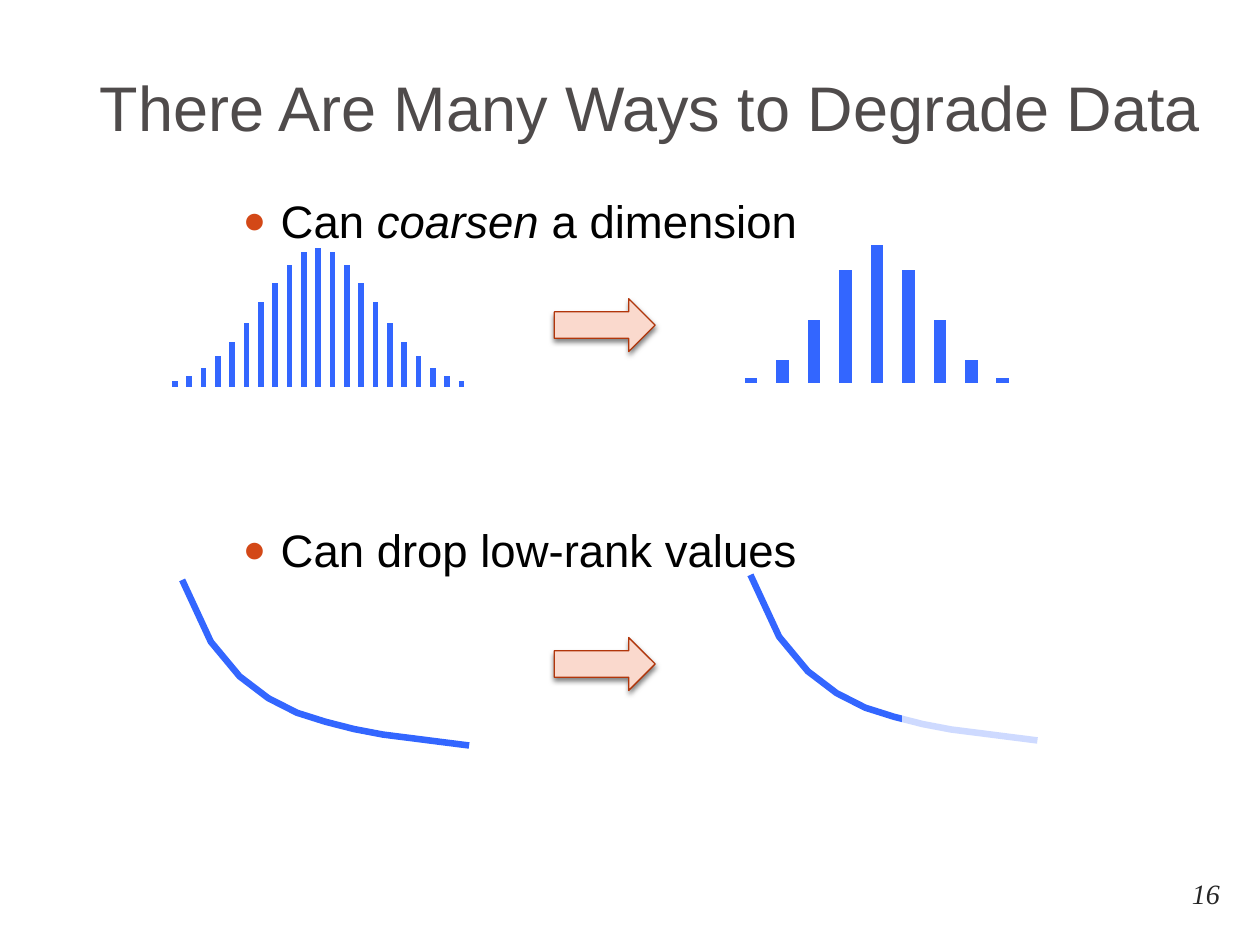
import pptx
import pptx.chart.data
import pptx.dml.color
import pptx.enum.chart
import pptx.enum.shapes
import pptx.enum.text
import pptx.oxml
import pptx.util
from pptx.util import Inches

BLUE = "3366FF"
LEFT_CHART, RIGHT_CHART = 1.28, 5.79
DRAWING_NS = 'xmlns:a="http://schemas.openxmlformats.org/drawingml/2006/main"'
ALIGN = pptx.enum.text.PP_ALIGN
ANCHOR = pptx.enum.text.MSO_ANCHOR
CHART = pptx.enum.chart.XL_CHART_TYPE
SHAPE = pptx.enum.shapes.MSO_SHAPE


def color(hex_string):
    return pptx.dml.color.RGBColor.from_string(hex_string)


def drawing_xml(xml):
    """Parse an element after declaring the drawing namespace on its root."""
    end = min(xml.index(">"), xml.index(" ")) if " " in xml else xml.index(">")
    return pptx.oxml.parse_xml(f"{xml[:end]} {DRAWING_NS}{xml[end:]}")


def add_text(slide, box, runs, size=26, font="Arial", fill="000000",
             align=ALIGN.LEFT, anchor=ANCHOR.TOP, bottom=0.05, bullet=False):
    """Add one paragraph; runs is a list of (text, italic) pairs."""
    shape = slide.shapes.add_textbox(*map(Inches, box))
    frame = shape.text_frame
    frame.word_wrap = True
    frame.vertical_anchor = anchor
    frame.margin_bottom = Inches(bottom)
    paragraph = frame.paragraphs[0]
    paragraph.alignment = align
    for text, italic in runs:
        run = paragraph.add_run()
        run.text = text
        run.font.size = pptx.util.Pt(size)
        run.font.name = font
        run.font.italic = italic
        run.font.color.rgb = color(fill)
    if bullet:
        paragraph.space_before = pptx.util.Pt(5.8)
        properties = paragraph._p.get_or_add_pPr()
        properties.set("marL", str(Inches(0.3)))
        properties.set("indent", str(Inches(-0.3)))
        for xml in ('<a:buClr><a:srgbClr val="D34817"/></a:buClr>',
                    '<a:buSzPct val="85000"/>',
                    '<a:buFont typeface="Arial"/>',
                    '<a:buChar char="●"/>'):
            properties.append(drawing_xml(xml))


def add_bare_chart(slide, kind, box, values, maximum):
    """Add a one-series chart without axes, legend or title."""
    data = pptx.chart.data.CategoryChartData()
    data.categories = [str(i) for i in range(1, len(values) + 1)]
    data.add_series("Series 1", values)
    chart = slide.shapes.add_chart(kind, *map(Inches, box), data).chart
    chart.has_legend = False
    chart.has_title = False
    chart.font.size = pptx.util.Pt(10)
    chart.font.name = "Arial"
    chart.font.color.rgb = color("000000")
    chart.value_axis.minimum_scale = 0
    chart.value_axis.maximum_scale = maximum
    chart.value_axis.has_major_gridlines = False
    for axis in (chart.category_axis, chart.value_axis):
        axis.visible = False
    plot = chart.plots[0]
    plot.vary_by_categories = False
    return plot


def add_columns(slide, box, values):
    plot = add_bare_chart(slide, CHART.COLUMN_CLUSTERED, box, values, 120)
    plot.gap_width = 150
    fill = plot.series[0].format.fill
    fill.solid()
    fill.fore_color.rgb = color(BLUE)


def add_curve(slide, box, values):
    plot = add_bare_chart(slide, CHART.LINE, box, values, 109)
    series = plot.series[0]
    series.smooth = False
    series.marker.style = pptx.enum.chart.XL_MARKER_STYLE.NONE
    series.format.line.color.rgb = color(BLUE)
    series.format.line.width = pptx.util.Pt(3.75)


def add_filled_shape(slide, kind, box, fill):
    shape = slide.shapes.add_shape(kind, *map(Inches, box))
    shape.shadow.inherit = False
    shape.fill.solid()
    shape.fill.fore_color.rgb = color(fill)
    shape.line.fill.background()
    return shape


def add_arrow(slide, top):
    shape = add_filled_shape(slide, SHAPE.RIGHT_ARROW, (4.4, top, 0.8, 0.42), "FAD9CD")
    shape.line.color.rgb = color("B1360B")
    shape.line.width = pptx.util.Pt(0.75)
    blur, distance = pptx.util.Pt(3), pptx.util.Pt(2)
    effects = shape._element.spPr.find(pptx.oxml.ns.qn("a:effectLst"))
    effects.append(drawing_xml(
        f'<a:outerShdw blurRad="{blur}" dist="{distance}" dir="5400000" rotWithShape="0">'
        '<a:srgbClr val="000000"><a:alpha val="50000"/></a:srgbClr></a:outerShdw>'))


def add_veil(slide, box):
    """Fade what lies behind with a translucent white rectangle."""
    shape = add_filled_shape(slide, SHAPE.RECTANGLE, box, "FFFFFF")
    white = shape._element.spPr.find(".//" + pptx.oxml.ns.qn("a:srgbClr"))
    white.append(drawing_xml('<a:alpha val="76000"/>'))


def mirrored(rising):
    return rising + rising[-2::-1]


def main():
    presentation = pptx.Presentation()
    presentation.slide_width, presentation.slide_height = Inches(10), Inches(7.5)
    slide = presentation.slides.add_slide(presentation.slide_layouts[6])

    # Title and page number
    add_text(slide, (0.49, -0.01, 9.34, 1.25),
             [("There Are Many Ways to Degrade Data", False)], size=36,
             fill="4F4B4B", align=ALIGN.CENTER, anchor=ANCHOR.BOTTOM, bottom=0.1)
    add_text(slide, (9.13, 6.89, 0.65, 0.4), [("16", True)], size=16,
             font="Times New Roman", fill="262626", align=ALIGN.RIGHT,
             anchor=ANCHOR.MIDDLE)

    # Coarsening: fine histogram to coarse histogram
    add_text(slide, (1.83, 1.48, 5.46, 0.62),
             [("Can ", False), ("coarsen", True), (" a dimension", False)], bullet=True)
    add_columns(slide, (LEFT_CHART, 1.72, 2.49, 1.38),
                mirrored([4, 8, 14, 22, 32, 46, 61, 75, 88, 97, 100]))
    add_columns(slide, (RIGHT_CHART, 1.7, 2.34, 1.37), mirrored([4, 17, 46, 82, 100]))
    add_arrow(slide, 2.37)

    # Dropping low ranks: full curve to curve with a faded tail
    add_text(slide, (1.83, 4.09, 5.46, 0.62),
             [("Can drop low-rank values", False)], bullet=True)
    ranked_values = [100, 66, 47, 35, 27, 22, 18, 15, 13, 11, 9]
    for left, top in ((LEFT_CHART, 4.44), (RIGHT_CHART, 4.4)):
        add_curve(slide, (left, top, 2.61, 1.64), ranked_values)
    add_veil(slide, (7.16, 5.06, 1.25, 0.98))
    add_arrow(slide, 5.06)

    presentation.save("out.pptx")


if __name__ == "__main__":
    main()
